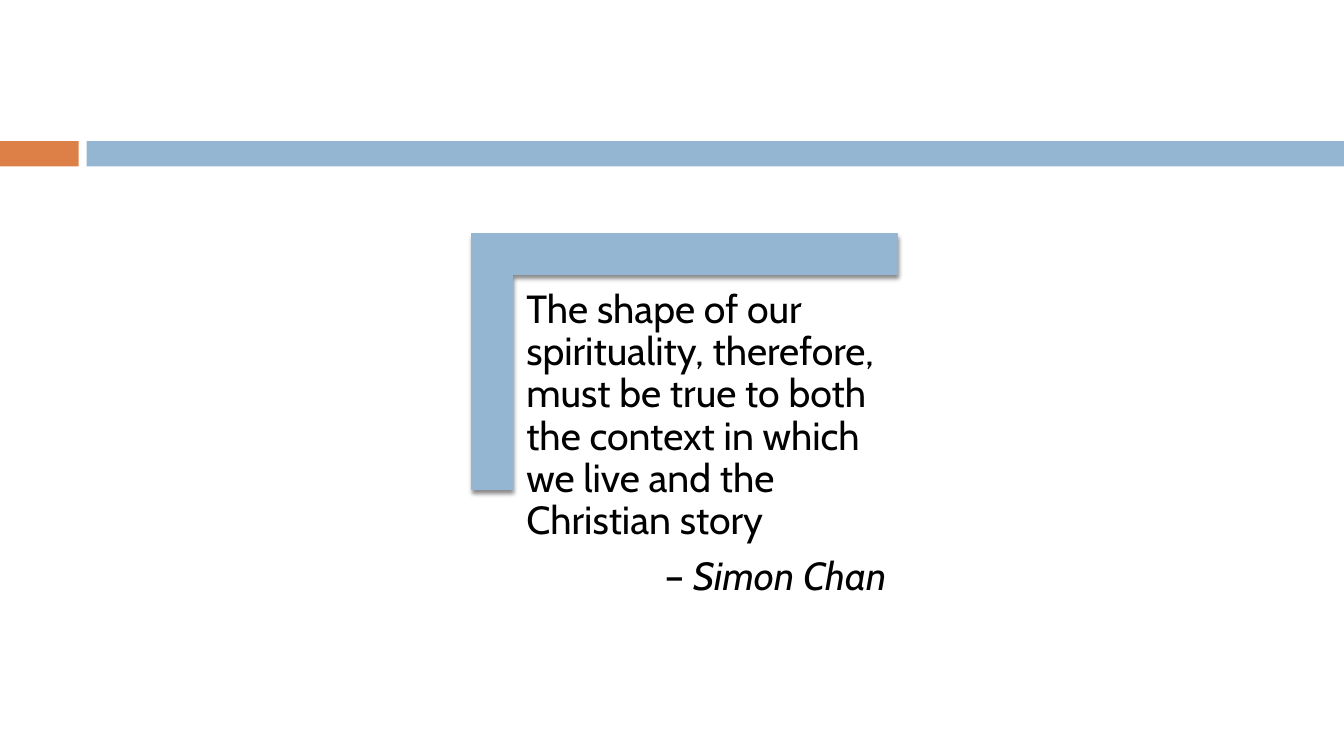
from lxml import etree
from pptx import Presentation
from pptx.dml.color import RGBColor
from pptx.enum.shapes import MSO_SHAPE
from pptx.enum.text import MSO_ANCHOR, PP_ALIGN
from pptx.oxml import parse_xml
from pptx.oxml.ns import nsdecls, qn
from pptx.util import Inches, Pt

RECTANGLE = MSO_SHAPE.RECTANGLE
CORNER = MSO_SHAPE.CORNER
TOP = MSO_ANCHOR.TOP
LEFT = PP_ALIGN.LEFT
RIGHT = PP_ALIGN.RIGHT

ORANGE = RGBColor(0xDD, 0x80, 0x47)
BLUE = RGBColor(0x94, 0xB6, 0xD2)
BLACK = RGBColor(0, 0, 0)

SLIDE_WIDTH, SLIDE_HEIGHT = 13.33, 7.5
BAND_TOP, BAND_HEIGHT = 1.4, 0.25
ACCENT_WIDTH, BAND_LEFT = 0.78, 0.86

QUOTE = [
    (["The shape of our spirituality, therefore, must be true to both "
      "the context in which we live and the Christian story"], LEFT),
    (["– ", "Simon Chan"], RIGHT),
]


class QuoteSlide:
    """Draws styled elements on one slide."""

    font = "Cabin"
    size = Pt(28)
    inset = Inches(0.12)

    def __init__(self, slide):
        self.slide = slide

    def block(self, kind, left, top, width, height, color):
        shape = self.slide.shapes.add_shape(
            kind, Inches(left), Inches(top), Inches(width), Inches(height))
        shape.shadow.inherit = False
        shape.fill.solid()
        shape.fill.fore_color.rgb = color
        shape.line.fill.background()
        return shape

    def bracket(self, left, top, width, height, thickness, color):
        shape = self.block(CORNER, left, top, width, height, color)
        shape.rotation = 90
        shape.adjustments[0] = shape.adjustments[1] = thickness
        shape.line.color.rgb = color
        shape.line.width = Pt(0.79)
        effects = shape.element.spPr.find(qn("a:effectLst"))
        effects.append(parse_xml(
            f'<a:outerShdw {nsdecls("a")} blurRad="{Pt(3)}" dist="{Pt(2.4)}" '
            'dir="5400000" rotWithShape="0"><a:srgbClr val="000000"/></a:outerShdw>'))
        etree.SubElement(effects[0][0], qn("a:alpha"), val="45000")

    def text(self, left, top, width, height, paragraphs):
        box = self.slide.shapes.add_textbox(
            Inches(left), Inches(top), Inches(width), Inches(height))
        frame = box.text_frame
        frame.word_wrap = True
        frame.vertical_anchor = TOP
        frame.margin_left = frame.margin_right = self.inset
        frame.margin_top = frame.margin_bottom = self.inset
        frame.text = "\n".join(pieces[0] for pieces, _ in paragraphs)
        for paragraph, (pieces, alignment) in zip(frame.paragraphs, paragraphs):
            paragraph.alignment = alignment
            paragraph.line_spacing = 0.9
            paragraph.space_after = Pt(9.8)
            for piece in pieces[1:]:
                run = paragraph.add_run()
                run.text = piece
                run.font.italic = True
            for run in paragraph.runs:
                run.font.name = self.font
                run.font.size = self.size
                run.font.color.rgb = BLACK


def main():
    presentation = Presentation()
    presentation.slide_width = Inches(SLIDE_WIDTH)
    presentation.slide_height = Inches(SLIDE_HEIGHT)
    blank_layout = presentation.slide_layouts[6]
    page = QuoteSlide(presentation.slides.add_slide(blank_layout))
    page.block(RECTANGLE, 0, BAND_TOP, ACCENT_WIDTH, BAND_HEIGHT, ORANGE)
    page.block(RECTANGLE, BAND_LEFT, BAND_TOP, SLIDE_WIDTH - BAND_LEFT,
               BAND_HEIGHT, BLUE)
    page.bracket(5.52, 1.48, 2.54, 4.22, 0.16, BLUE)
    page.text(5.1, 2.75, 3.81, 3.34, QUOTE)
    presentation.save("out.pptx")


if __name__ == "__main__":
    main()
